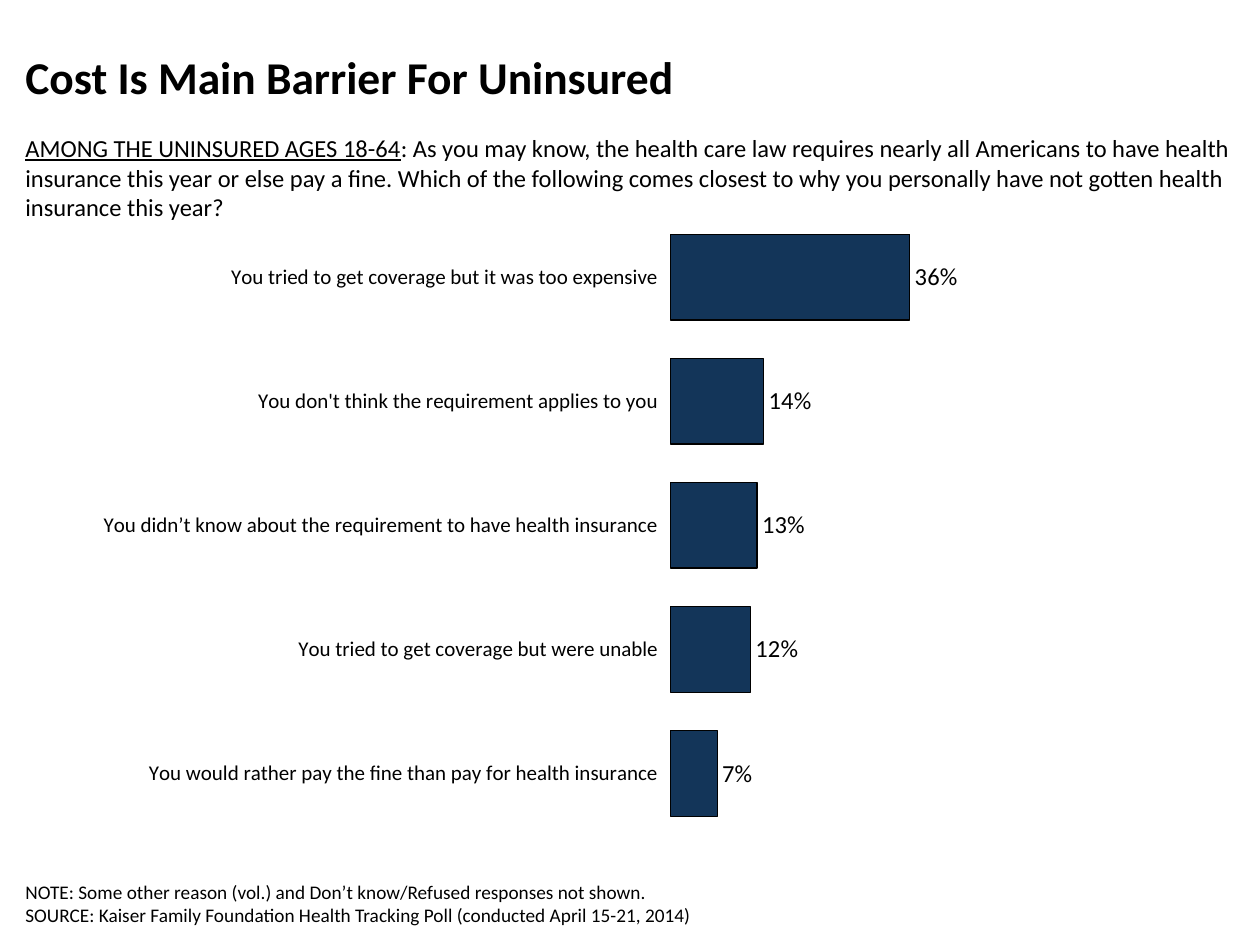
import pptx
import pptx.chart.data
import pptx.dml.color
import pptx.enum.chart
import pptx.enum.text
import pptx.oxml
import pptx.oxml.ns
import pptx.util

EMU_PER_PX = 914400 / 126
FONT = "Calibri"
BLACK = "000000"
NAVY = "133559"

REASONS = {
    "You tried to get coverage but it was too expensive": 0.36,
    "You don't think the requirement applies to you": 0.14,
    "You didn’t know about the requirement to have health insurance": 0.13,
    "You tried to get coverage but were unable": 0.12,
    "You would rather pay the fine than pay for health insurance": 0.07,
}


def px(length):
    return pptx.util.Emu(round(length * EMU_PER_PX))


def color(hex_value):
    return pptx.dml.color.RGBColor.from_string(hex_value)


def style_font(font, size, bold=False):
    font.name = FONT
    font.size = pptx.util.Pt(size)
    font.bold = bold
    font.color.rgb = color(BLACK)


def add_text(slide, box, paragraphs, size, anchor, bold=False):
    """Add a text box; each paragraph is a list of (text, underlined) runs."""
    shape = slide.shapes.add_textbox(*map(px, box))
    frame = shape.text_frame
    frame.word_wrap = True
    frame.vertical_anchor = anchor
    for index, runs in enumerate(paragraphs):
        paragraph = frame.add_paragraph() if index else frame.paragraphs[0]
        style_font(paragraph.font, size, bold)
        for text, underlined in runs:
            run = paragraph.add_run()
            run.text = text
            if underlined:
                run.font.underline = True


def set_plot_area(chart, x, y, width, height):
    """Fix the inner plot area, in fractions of the chart."""
    plot_area = chart.plots[0]._element.getparent()
    for old in plot_area.findall(pptx.oxml.ns.qn("c:layout")):
        plot_area.remove(old)
    settings = {
        "layoutTarget": "inner", "xMode": "edge", "yMode": "edge",
        "x": x, "y": y, "w": width, "h": height,
    }
    children = "".join(f'<c:{tag} val="{value}"/>' for tag, value in settings.items())
    plot_area.insert(0, pptx.oxml.parse_xml(
        f'<c:layout {pptx.oxml.ns.nsdecls("c")}>'
        f"<c:manualLayout>{children}</c:manualLayout></c:layout>"))


def add_reasons_chart(slide, box):
    data = pptx.chart.data.CategoryChartData(number_format="0%")
    data.categories = list(REASONS)
    data.add_series("Series 1", list(REASONS.values()))
    chart = slide.shapes.add_chart(
        pptx.enum.chart.XL_CHART_TYPE.BAR_CLUSTERED, *map(px, box), data).chart
    chart.has_legend = False
    chart.has_title = False
    style_font(chart.font, 13)

    categories = chart.category_axis
    categories.reverse_order = True
    categories.major_tick_mark = pptx.enum.chart.XL_TICK_MARK.OUTSIDE
    categories.format.line.fill.background()
    style_font(categories.tick_labels.font, 12)

    values = chart.value_axis
    values.minimum_scale = 0
    values.maximum_scale = 1.05
    values.has_major_gridlines = False
    values.visible = False

    plot = chart.plots[0]
    plot.gap_width = 45
    plot.vary_by_categories = False
    bars = plot.series[0].format
    bars.fill.solid()
    bars.fill.fore_color.rgb = color(NAVY)
    bars.line.color.rgb = color(BLACK)
    bars.line.width = pptx.util.Pt(0.75)

    plot.has_data_labels = True
    labels = plot.data_labels
    labels.show_value = True
    labels.number_format = "0%"
    labels.number_format_is_linked = False
    labels.position = pptx.enum.chart.XL_LABEL_POSITION.OUTSIDE_END
    style_font(labels.font, 14)
    set_plot_area(chart, 0.497, 0.046, 0.503, 0.943)


def main():
    presentation = pptx.Presentation()
    presentation.slide_width = px(1260)
    presentation.slide_height = px(945)
    slide = presentation.slides.add_slide(presentation.slide_layouts[6])
    anchors = pptx.enum.text.MSO_ANCHOR

    add_text(slide, (13, 13, 1235, 126),
             [[("Cost Is Main Barrier For Uninsured", False)]],
             26, anchors.MIDDLE, bold=True)
    add_reasons_chart(slide, (-18, 185, 1386, 658))
    question = (
        ": As you may know, the health care law requires nearly all Americans to have "
        "health insurance this year or else pay a fine. Which of the following comes "
        "closest to why you personally have not gotten health insurance this year?")
    add_text(slide, (13, 127, 1235, 149),
             [[("AMONG THE UNINSURED AGES 18-64", True), (question, False)]],
             14, anchors.TOP)
    add_text(slide, (13, 857, 1147, 76), [
        [("NOTE: Some other reason (vol.) and Don’t know/Refused responses not shown.", False)],
        [("SOURCE: Kaiser Family Foundation Health Tracking Poll "
          "(conducted April 15-21, 2014)", False)],
    ], 11, anchors.BOTTOM)
    presentation.save("out.pptx")


if __name__ == "__main__":
    main()
